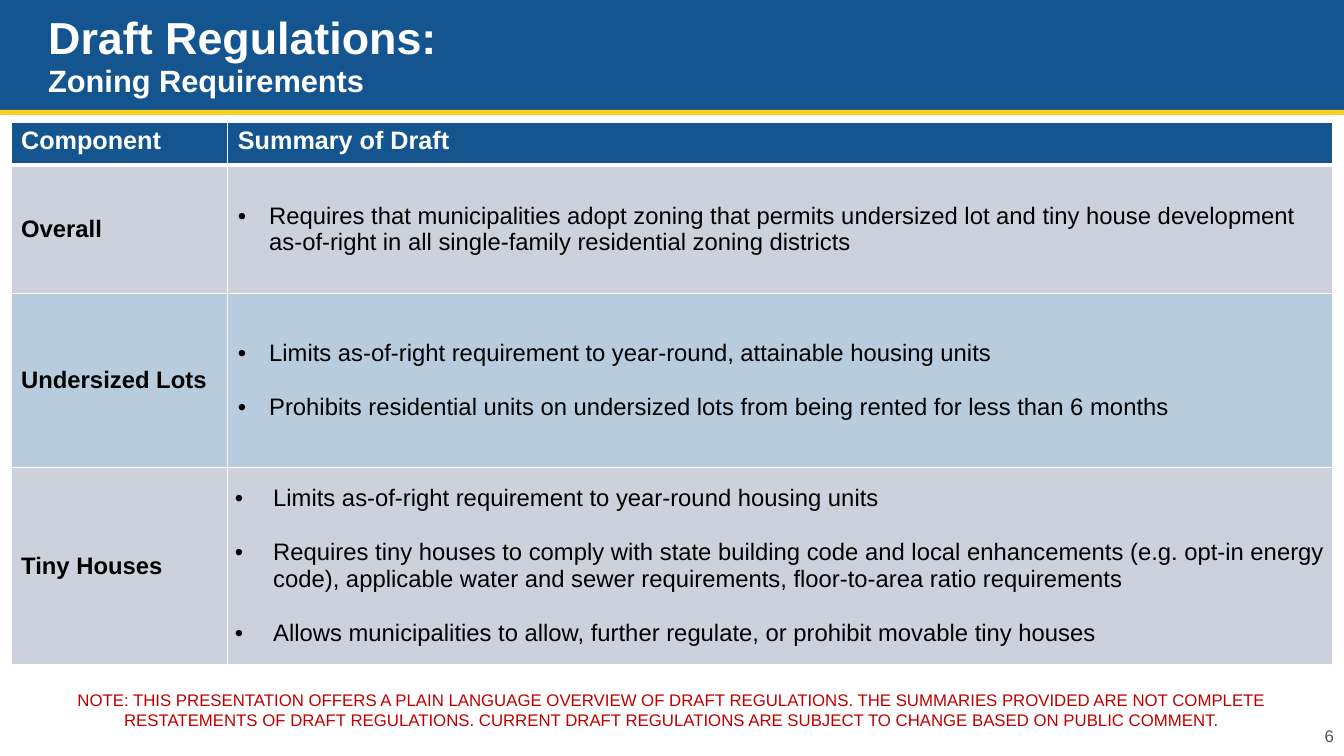
from dataclasses import dataclass

from lxml.etree import SubElement
from pptx import Presentation
from pptx.dml.color import RGBColor
from pptx.enum.shapes import MSO_SHAPE
from pptx.enum.text import MSO_ANCHOR, PP_ALIGN
from pptx.oxml import parse_xml
from pptx.oxml.ns import nsdecls, qn
from pptx.util import Inches, Pt


@dataclass(frozen=True)
class Theme:
    """Colours, font and type sizes of the deck."""
    font: str = "Arial"
    blue: str = "14558F"
    yellow: str = "F9CE20"
    white: str = "FFFFFF"
    black: str = "000000"
    grey: str = "535353"
    red: str = "C00000"
    bands: tuple = ("CCD1DB", "B9CCDD")
    title: float = 32
    subtitle: float = 22
    heading: float = 18
    body: float = 17
    small: float = 12


THEME = Theme()
WIDTH, HEIGHT = 13.33, 7.5
COLUMNS = (2.15, 10.96)
ROWS = (0.43, 1.27, 1.73, 1.95)
ITEM_GAP = 19.5
HEADINGS = ("Component", "Summary of Draft")
COMPONENTS = (
    ("Overall", 0.31, (
        "Requires that municipalities adopt zoning that permits undersized lot and tiny house "
        "development as-of-right in all single-family residential zoning districts",
    )),
    ("Undersized Lots", 0.31, (
        "Limits as-of-right requirement to year-round, attainable housing units",
        "Prohibits residential units on undersized lots from being rented for less than 6 months",
    )),
    ("Tiny Houses", 0.38, (
        "Limits as-of-right requirement to year-round housing units",
        "Requires tiny houses to comply with state building code and local enhancements "
        "(e.g. opt-in energy code), applicable water and sewer requirements, "
        "floor-to-area ratio requirements",
        "Allows municipalities to allow, further regulate, or prohibit movable tiny houses",
    )),
)
NOTE = (
    "NOTE: THIS PRESENTATION OFFERS A PLAIN LANGUAGE OVERVIEW OF DRAFT REGULATIONS. "
    "THE SUMMARIES PROVIDED ARE NOT COMPLETE RESTATEMENTS OF DRAFT REGULATIONS. "
    "CURRENT DRAFT REGULATIONS ARE SUBJECT TO CHANGE BASED ON PUBLIC COMMENT."
)


def style(para, size, color, bold=False):
    """Format every run of a paragraph."""
    for span in para.runs:
        span.font.name = THEME.font
        span.font.size = Pt(size)
        span.font.bold = bold
        span.font.color.rgb = RGBColor.from_string(color)


def add_band(page, box, color):
    """Draw a plain filled rectangle."""
    band = page.shapes.add_shape(MSO_SHAPE.RECTANGLE, *map(Inches, box))
    band.shadow.inherit = False
    band.fill.solid()
    band.fill.fore_color.rgb = RGBColor.from_string(color)
    band.line.fill.background()


def add_text(page, box, text, align=PP_ALIGN.LEFT):
    """Add a wrapping, vertically centred text box and return its paragraphs."""
    frame = page.shapes.add_textbox(*map(Inches, box)).text_frame
    frame.word_wrap = True
    frame.vertical_anchor = MSO_ANCHOR.MIDDLE
    frame.text = text
    for para in frame.paragraphs:
        para.alignment = align
    return frame.paragraphs


def add_header(page, box):
    """Build the title band with its yellow rule."""
    left, top, width, height = box
    add_band(page, box, THEME.blue)
    add_band(page, (left, top + height - 0.01, width, 0.05), THEME.yellow)
    title, subtitle = add_text(
        page, (left + 0.38, top + 0.02, 11.5, height), "Draft Regulations:\nZoning Requirements")
    style(title, THEME.title, THEME.white, True)
    style(subtitle, THEME.subtitle, THEME.white, True)
    title.line_spacing = subtitle.line_spacing = 0.9
    subtitle.space_before = Pt(1)


def paint_cell(cell, color, top=1, bottom=1):
    """Fill a cell and give it white borders."""
    cell.fill.solid()
    cell.fill.fore_color.rgb = RGBColor.from_string(color)
    properties = cell._tc.get_or_add_tcPr()
    for index, (side, points) in enumerate(zip("LRTB", (1, 1, top, bottom))):
        properties.insert(index, parse_xml(
            f'<a:ln{side} {nsdecls("a")} w="{Pt(points)}"><a:solidFill>'
            f'<a:srgbClr val="{THEME.white}"/></a:solidFill></a:ln{side}>'))


def add_bullet(para, indent):
    """Give a paragraph a hanging bullet."""
    properties = para._p.get_or_add_pPr()
    properties.set("marL", str(Inches(indent)))
    properties.set("indent", str(-Inches(indent)))
    SubElement(properties, qn("a:buFont")).set("typeface", THEME.font)
    SubElement(properties, qn("a:buChar")).set("char", "•")


def fill_summary(cell, indent, items):
    """Write the bulleted summary of one component."""
    cell.text_frame.text = "\n".join(items)
    for index, para in enumerate(cell.text_frame.paragraphs):
        if index:
            para.space_before = Pt(ITEM_GAP)
        add_bullet(para, indent)
        style(para, THEME.body, THEME.black)


def add_components(page, box):
    """Build the table of components and their summaries."""
    table = page.shapes.add_table(len(ROWS), len(COLUMNS), *map(Inches, box)).table
    for column, width in zip(table.columns, COLUMNS):
        column.width = Inches(width)
    for row, height in zip(table.rows, ROWS):
        row.height = Inches(height)
    for cell, heading in zip(table.rows[0].cells, HEADINGS):
        cell.text_frame.text = heading
        style(cell.text_frame.paragraphs[0], THEME.heading, THEME.white, True)
        paint_cell(cell, THEME.blue, bottom=3)
    for number, (name, indent, items) in enumerate(COMPONENTS, 1):
        label, summary = table.rows[number].cells
        label.text_frame.text = name
        style(label.text_frame.paragraphs[0], THEME.body, THEME.black, True)
        fill_summary(summary, indent, items)
        for cell in (label, summary):
            cell.vertical_anchor = MSO_ANCHOR.MIDDLE
            paint_cell(cell, THEME.bands[(number - 1) % 2], top=3 if number == 1 else 1)
    summary.margin_left = summary.margin_right = Inches(0.07)
    summary.margin_top = summary.margin_bottom = 0


def add_footer(page, box):
    """Build the centred note and the page number in the corner."""
    left, top, width, height = box
    number = add_text(page, (WIDTH - 3, top + height - 0.4, 3, 0.4), "6", PP_ALIGN.RIGHT)[0]
    style(number, THEME.small, THEME.grey)
    note = add_text(page, box, NOTE, PP_ALIGN.CENTER)[0]
    style(note, THEME.small, THEME.red)


def main():
    """Build and save the deck."""
    deck = Presentation()
    deck.slide_width, deck.slide_height = Inches(WIDTH), Inches(HEIGHT)
    page = deck.slides.add_slide(deck.slide_layouts[6])
    add_header(page, (0, 0, WIDTH, 1.1))
    table_top, table_height = 1.21, sum(ROWS)
    add_components(page, (0.11, table_top, sum(COLUMNS), table_height))
    footer_top = table_top + table_height
    add_footer(page, (0.1, footer_top, WIDTH - 0.2, HEIGHT - footer_top))
    deck.save("out.pptx")


if __name__ == "__main__":
    main()
